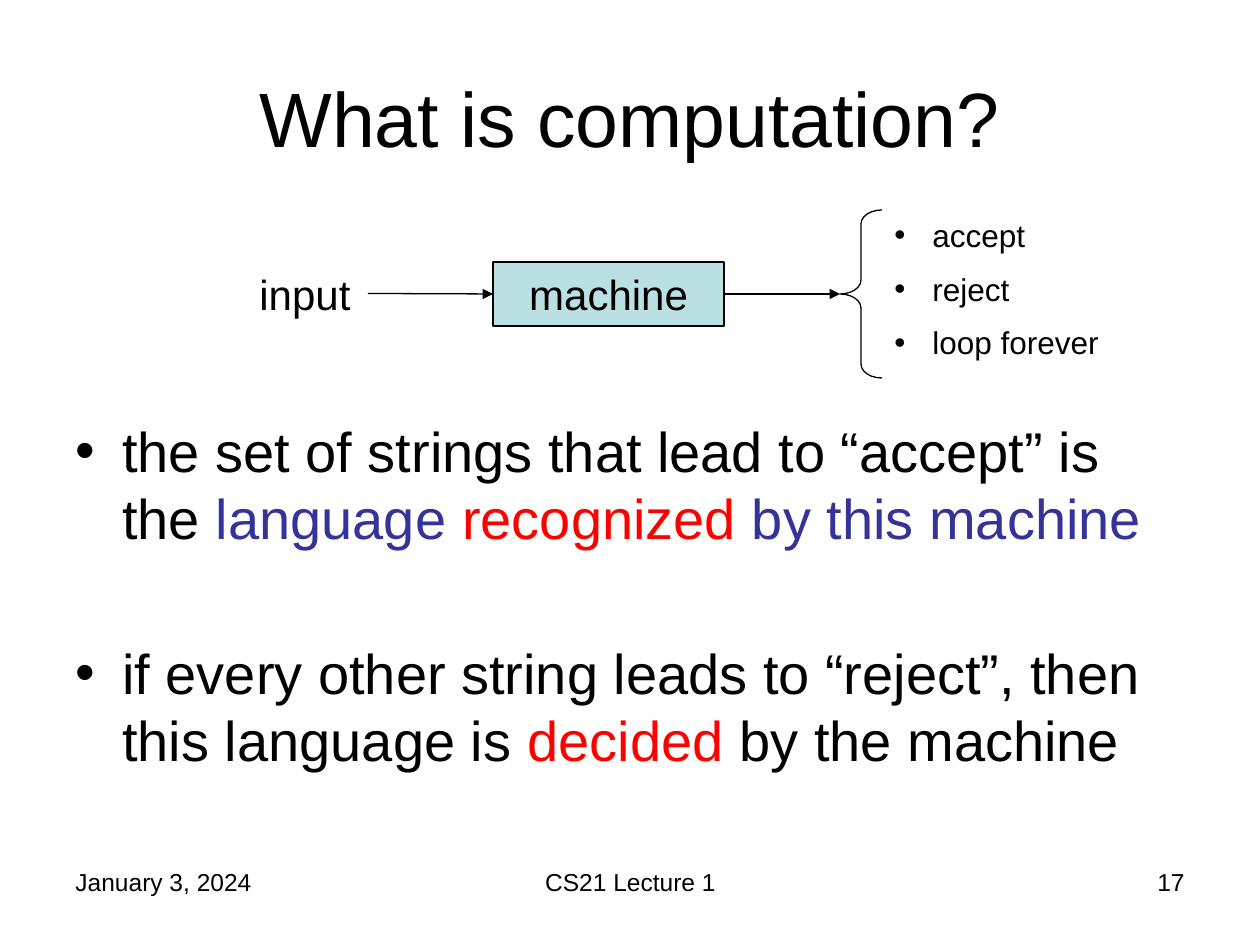
"""Build the slide that explains computation with a machine diagram."""
from lxml.etree import SubElement
from pptx import Presentation
from pptx.dml.color import RGBColor
from pptx.enum.shapes import MSO_CONNECTOR, MSO_SHAPE
from pptx.enum.text import MSO_ANCHOR, PP_ALIGN
from pptx.oxml.ns import qn
from pptx.util import Pt

PX = 914400 // 126
FONT = "Arial"
COLORS = {"black": "000000", "blue": "333399", "red": "FF0000", "teal": "BBE0E3"}

TITLE = "What is computation?"
OUTCOMES = ["accept", "reject", "loop forever"]
STATEMENTS = [
    [
        ("the set of strings that lead to “accept” is the ", "black"),
        ("language ", "blue"),
        ("recognized", "red"),
        (" by this machine", "blue"),
    ],
    [
        ("if every other string leads to “reject”, then this language is ", "black"),
        ("decided", "red"),
        (" by the machine", "black"),
    ],
]
FOOTERS = [
    ("January 3, 2024", (63, 861, 294, 65), PP_ALIGN.LEFT),
    ("CS21 Lecture 1", (431, 861, 399, 65), PP_ALIGN.CENTER),
    ("17", (903, 861, 294, 65), PP_ALIGN.RIGHT),
]
PLACES = {
    "title": (63, 38, 1134, 158),
    "statements": (63, 410, 1134, 435),
    "input": (242, 262, 126, 63),
    "machine": (493, 262, 231, 64),
    "brace": (840, 210, 42, 168),
    "outcomes": (882, 210, 305, 164),
}


def emu(place):
    return [value * PX for value in place]


def color(name):
    return RGBColor.from_string(COLORS[name])


def write(shape, paragraphs, size, align=PP_ALIGN.LEFT, anchor=MSO_ANCHOR.TOP, gap=0, indent=0):
    """Fill a shape with paragraphs, each a string or a list of (text, color) runs."""
    frame = shape.text_frame
    frame.word_wrap = True
    frame.vertical_anchor = anchor
    for index, content in enumerate(paragraphs):
        para = frame.paragraphs[0] if index == 0 else frame.add_paragraph()
        para.alignment = align
        para.space_before = Pt(gap if index else 0)
        if indent:
            properties = para._p.get_or_add_pPr()
            properties.set("marL", str(indent * PX))
            properties.set("indent", str(-indent * PX))
            SubElement(properties, qn("a:buFont"), typeface=FONT)
            SubElement(properties, qn("a:buChar"), char="•")
        runs = [(content, "black")] if isinstance(content, str) else content
        for text, name in runs:
            span = para.add_run()
            span.text = text
            span.font.name = FONT
            span.font.size = Pt(size)
            span.font.color.rgb = color(name)


def add_text(slide, place, paragraphs, **style):
    box = slide.shapes.add_textbox(*emu(place))
    write(box, paragraphs, **style)
    return box


def add_outlined(slide, kind, place, fill=None):
    shape = slide.shapes.add_shape(kind, *emu(place))
    shape.shadow.inherit = False
    if fill:
        shape.fill.solid()
        shape.fill.fore_color.rgb = color(fill)
    else:
        shape.fill.background()
    shape.line.color.rgb = color("black")
    shape.line.width = Pt(0.75)
    return shape


def add_arrow(slide, source, target):
    arrow = slide.shapes.add_connector(MSO_CONNECTOR.STRAIGHT, 0, 0, 0, 0)
    arrow.begin_connect(source, 3)
    arrow.end_connect(target, 1)
    arrow.line.color.rgb = color("black")
    arrow.line.width = Pt(0.75)
    SubElement(arrow.line._get_or_add_ln(), qn("a:tailEnd"), type="triangle")
    SubElement(arrow._element.spPr, qn("a:effectLst"))


def main():
    deck = Presentation()
    deck.slide_width, deck.slide_height = emu((1260, 945))
    slide = deck.slides.add_slide(deck.slide_layouts[6])

    for text, place, align in FOOTERS:
        add_text(slide, place, [text], size=14, align=align)
    add_text(slide, PLACES["title"], [TITLE], size=44, align=PP_ALIGN.CENTER, anchor=MSO_ANCHOR.MIDDLE)
    add_text(slide, PLACES["statements"], STATEMENTS, size=32, gap=50, indent=47)

    source = add_text(slide, PLACES["input"], ["input"], size=24, align=PP_ALIGN.CENTER)
    machine = add_outlined(slide, MSO_SHAPE.RECTANGLE, PLACES["machine"], fill="teal")
    write(machine, ["machine"], size=24, align=PP_ALIGN.CENTER)
    brace = add_outlined(slide, MSO_SHAPE.LEFT_BRACE, PLACES["brace"])
    brace.adjustments[0] = 0.33
    add_text(slide, PLACES["outcomes"], OUTCOMES, size=18, gap=9, indent=38)
    add_arrow(slide, source, machine)
    add_arrow(slide, machine, brace)

    deck.save("out.pptx")


if __name__ == "__main__":
    main()
